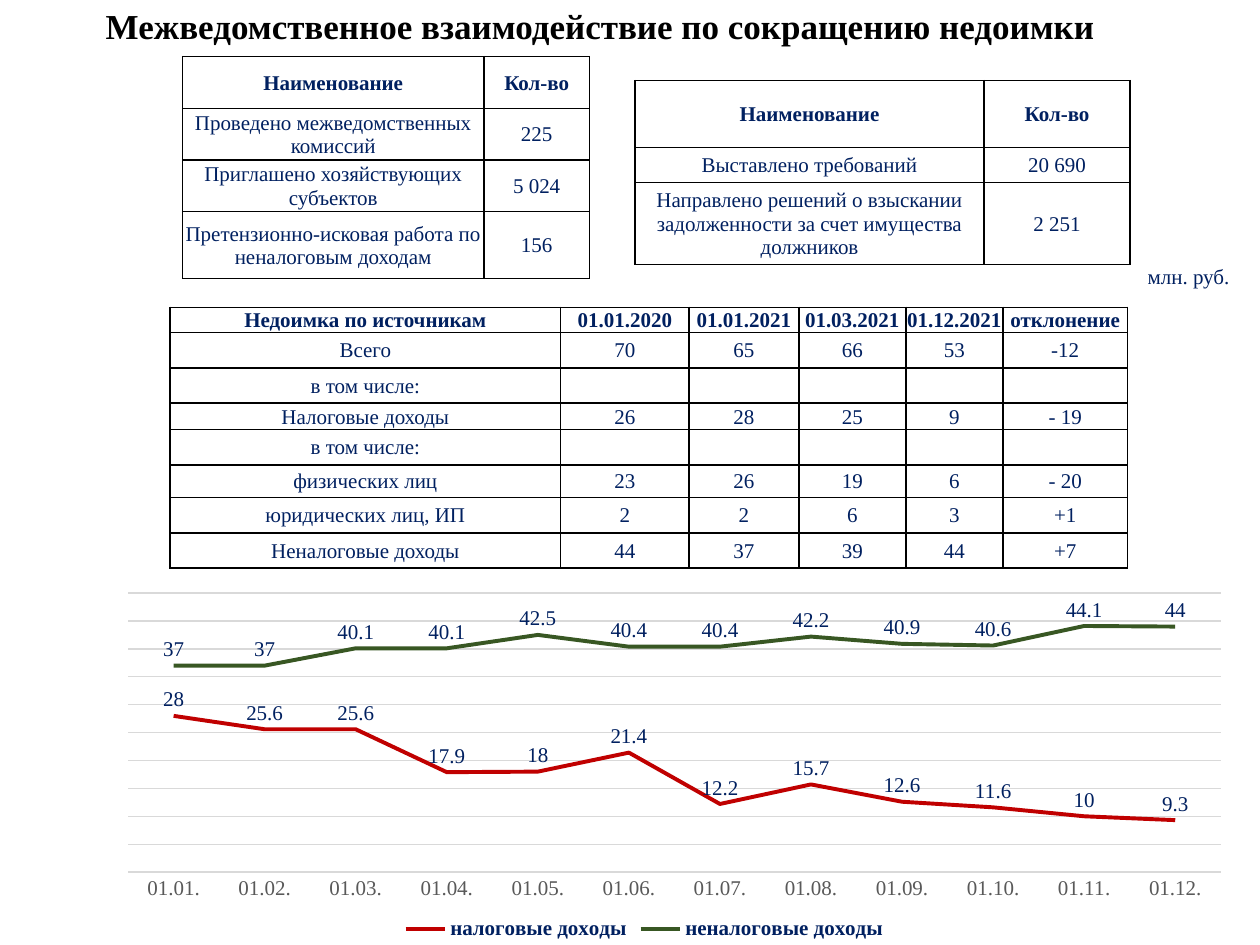
from dataclasses import dataclass

import pptx
import pptx.chart.data
import pptx.dml.color
import pptx.enum.chart
import pptx.enum.text
import pptx.oxml
import pptx.oxml.ns
import pptx.util

Inches = pptx.util.Inches
Pt = pptx.util.Pt
RGBColor = pptx.dml.color.RGBColor
CENTER = pptx.enum.text.PP_ALIGN.CENTER
MIDDLE = pptx.enum.text.MSO_ANCHOR.MIDDLE

FONT = "Times New Roman"
NAVY = RGBColor(0x00, 0x20, 0x60)
BLACK = RGBColor(0x00, 0x00, 0x00)
GRAY = RGBColor(0x59, 0x59, 0x59)
GRID = RGBColor(0xD9, 0xD9, 0xD9)
RED = RGBColor(0xC0, 0x00, 0x00)
GREEN = RGBColor(0x38, 0x57, 0x23)


@dataclass
class TableSpec:
    left: float
    top: float
    cols: list[float]
    heights: list[float]
    rows: list[list[str]]


@dataclass
class LineSeries:
    name: str
    values: list[float]
    color: RGBColor


TABLES = [
    TableSpec(1.45, 0.45, [2.39, 0.84], [0.41, 0.41, 0.41, 0.53], [
        ["Наименование", "Кол-во"],
        ["Проведено межведомственных комиссий", "225"],
        ["Приглашено хозяйствующих субъектов", "5 024"],
        ["Претензионно-исковая работа по неналоговым доходам", "156"],
    ]),
    TableSpec(5.04, 0.64, [2.77, 1.16], [0.53, 0.28, 0.65], [
        ["Наименование", "Кол-во"],
        ["Выставлено требований", "20 690"],
        ["Направлено решений о взыскании задолженности за счет имущества должников", "2 251"],
    ]),
    TableSpec(1.35, 2.44, [3.1, 1.02, 0.87, 0.85, 0.77, 0.99],
              [0.2, 0.28, 0.28, 0.21, 0.28, 0.26, 0.28, 0.28], [
        ["Недоимка по источникам", "01.01.2020", "01.01.2021", "01.03.2021", "01.12.2021", "отклонение"],
        ["Всего", "70", "65", "66", "53", "-12"],
        ["в том числе:"] + [""] * 5,
        ["Налоговые доходы", "26", "28", "25", "9", "- 19"],
        ["в том числе:"] + [""] * 5,
        ["физических лиц", "23", "26", "19", "6", "- 20"],
        ["юридических лиц, ИП", "2", "2", "6", "3", "+1"],
        ["Неналоговые доходы", "44", "37", "39", "44", "+7"],
    ]),
]
MONTHS = [f"{month:02d}" for month in range(1, 13)]
SERIES = [
    LineSeries("налоговые доходы",
               [28, 25.6, 25.6, 17.9, 18, 21.4, 12.2, 15.7, 12.6, 11.6, 10, 9.3], RED),
    LineSeries("неналоговые доходы",
               [37, 37, 40.1, 40.1, 42.5, 40.4, 40.4, 42.2, 40.9, 40.6, 44.1, 44], GREEN),
]


def set_font(font, color: RGBColor, size: float = 12, bold: bool = False) -> None:
    font.name = FONT
    font.size = Pt(size)
    font.bold = bold
    font.color.rgb = color


def fill_cell(cell, text: str, bold: bool) -> None:
    cell.margin_left = cell.margin_right = cell.margin_top = Inches(0.01)
    cell.margin_bottom = 0
    cell.vertical_anchor = MIDDLE
    tcPr = cell._tc.get_or_add_tcPr()
    for side in "LRTB":
        tcPr.append(pptx.oxml.parse_xml(
            f'<a:ln{side} {pptx.oxml.ns.nsdecls("a")} w="12700"><a:solidFill>'
            f'<a:srgbClr val="{BLACK}"/></a:solidFill></a:ln{side}>'))
    cell.fill.background()
    p = cell.text_frame.paragraphs[0]
    p.alignment = CENTER
    if text:
        r = p.add_run()
        r.text = text
        set_font(r.font, NAVY, bold=bold)
    else:
        p._p.get_or_add_endParaRPr().set("sz", "1200")


def draw_table(s, spec: TableSpec) -> None:
    frame = s.shapes.add_table(
        len(spec.heights), len(spec.cols), Inches(spec.left), Inches(spec.top),
        Inches(sum(spec.cols)), Inches(sum(spec.heights)))
    table = frame.table
    table.first_row = table.horz_banding = False
    for col, width in zip(table.columns, spec.cols):
        col.width = Inches(width)
    for i, (height, texts) in enumerate(zip(spec.heights, spec.rows)):
        table.rows[i].height = Inches(height)
        for j, text in enumerate(texts):
            fill_cell(table.cell(i, j), text, bold=i == 0)


def draw_chart(s, series: list[LineSeries]) -> None:
    data = pptx.chart.data.CategoryChartData()
    data.categories = [f"01.{month}." for month in MONTHS]
    for item in series:
        data.add_series(item.name, item.values)
    chart = s.shapes.add_chart(
        pptx.enum.chart.XL_CHART_TYPE.LINE, Inches(0.35), Inches(4.29),
        Inches(9.53), Inches(3.21), data).chart
    set_font(chart.font, BLACK)
    chart.has_title = False
    chart.has_legend = True
    chart.legend.position = pptx.enum.chart.XL_LEGEND_POSITION.BOTTOM
    chart.legend.include_in_layout = False
    set_font(chart.legend.font, NAVY, bold=True)

    cat = chart.category_axis
    cat.major_tick_mark = pptx.enum.chart.XL_TICK_MARK.NONE
    set_font(cat.tick_labels.font, GRAY)
    val = chart.value_axis
    val.visible = False
    val.minimum_scale, val.maximum_scale, val.major_unit = 0, 50, 5
    val.has_major_gridlines = True
    for line in (cat.format.line, val.major_gridlines.format.line):
        line.color.rgb = GRID
        line.width = Pt(0.75)

    plot = chart.plots[0]
    plot.vary_by_categories = False
    for ser, item in zip(plot.series, series):
        ser.smooth = False
        ser.marker.style = pptx.enum.chart.XL_MARKER_STYLE.NONE
        ser.format.line.color.rgb = item.color
        ser.format.line.width = Pt(2.25)
        labels = ser.data_labels
        labels.show_value = True
        labels.position = pptx.enum.chart.XL_LABEL_POSITION.ABOVE
        set_font(labels.font, NAVY)

    area = chart._chartSpace.chart.plotArea
    for old in area.findall(pptx.oxml.ns.qn("c:layout")):
        area.remove(old)
    bounds = "".join(f'<c:{tag} val="{value}"/>' for tag, value in
                     [("x", 0.07), ("y", 0.13), ("w", 0.91), ("h", 0.69)])
    area.insert(0, pptx.oxml.parse_xml(
        f'<c:layout {pptx.oxml.ns.nsdecls("c")}><c:manualLayout>'
        '<c:layoutTarget val="inner"/><c:xMode val="edge"/><c:yMode val="edge"/>'
        f'{bounds}</c:manualLayout></c:layout>'))


def main() -> None:
    prs = pptx.Presentation()
    prs.slide_width, prs.slide_height = Inches(10), Inches(7.5)
    s = prs.slides.add_slide(prs.slide_layouts[5])

    title = s.shapes.title
    title.left, title.top = Inches(0), Inches(-0.02)
    title.width, title.height = Inches(9.53), Inches(0.44)
    p = title.text_frame.paragraphs[0]
    p.alignment = CENTER
    r = p.add_run()
    r.text = "Межведомственное взаимодействие по сокращению недоимки"
    set_font(r.font, BLACK, 20, True)

    for spec in TABLES:
        draw_table(s, spec)
    draw_chart(s, SERIES)

    unit = s.shapes.add_textbox(Inches(9.01), Inches(2.04), Inches(0.96), Inches(0.5))
    tf = unit.text_frame
    tf.word_wrap = True
    r = tf.paragraphs[0].add_run()
    r.text = "млн. руб."
    set_font(r.font, NAVY)

    prs.save("out.pptx")


if __name__ == "__main__":
    main()
